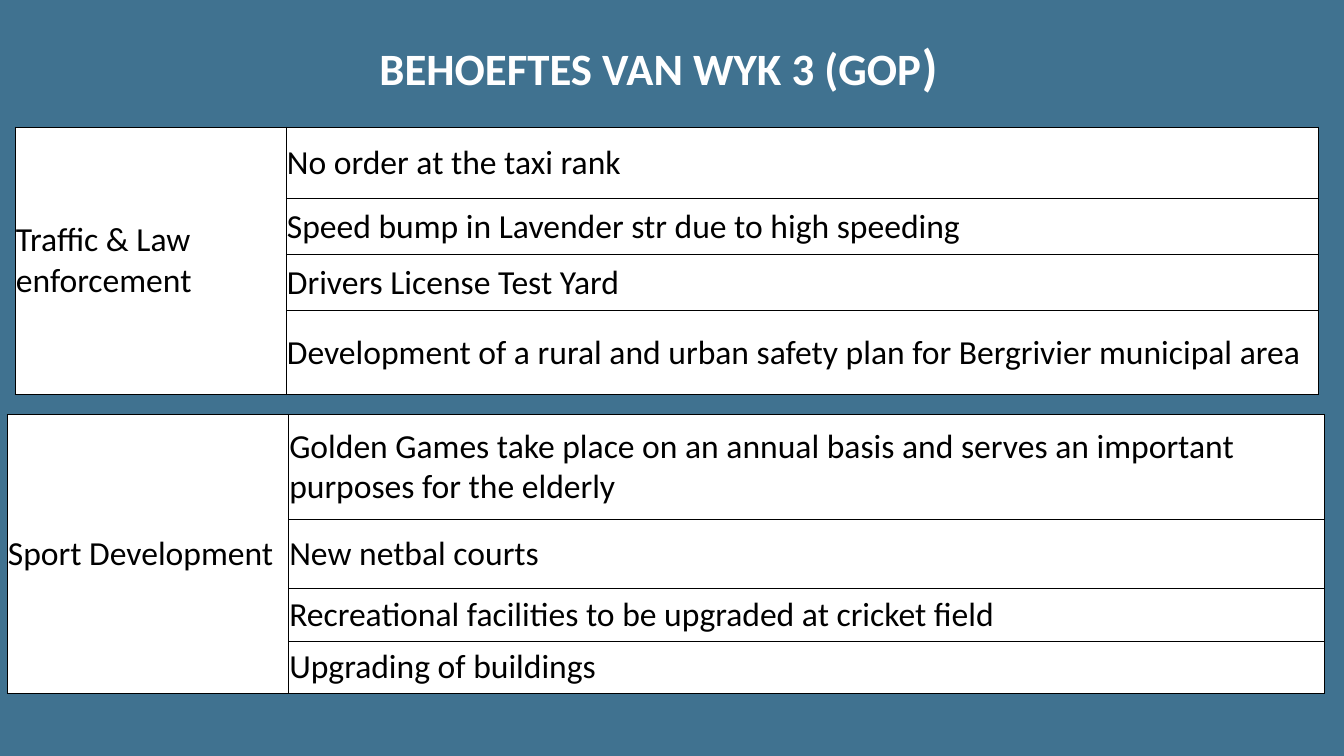
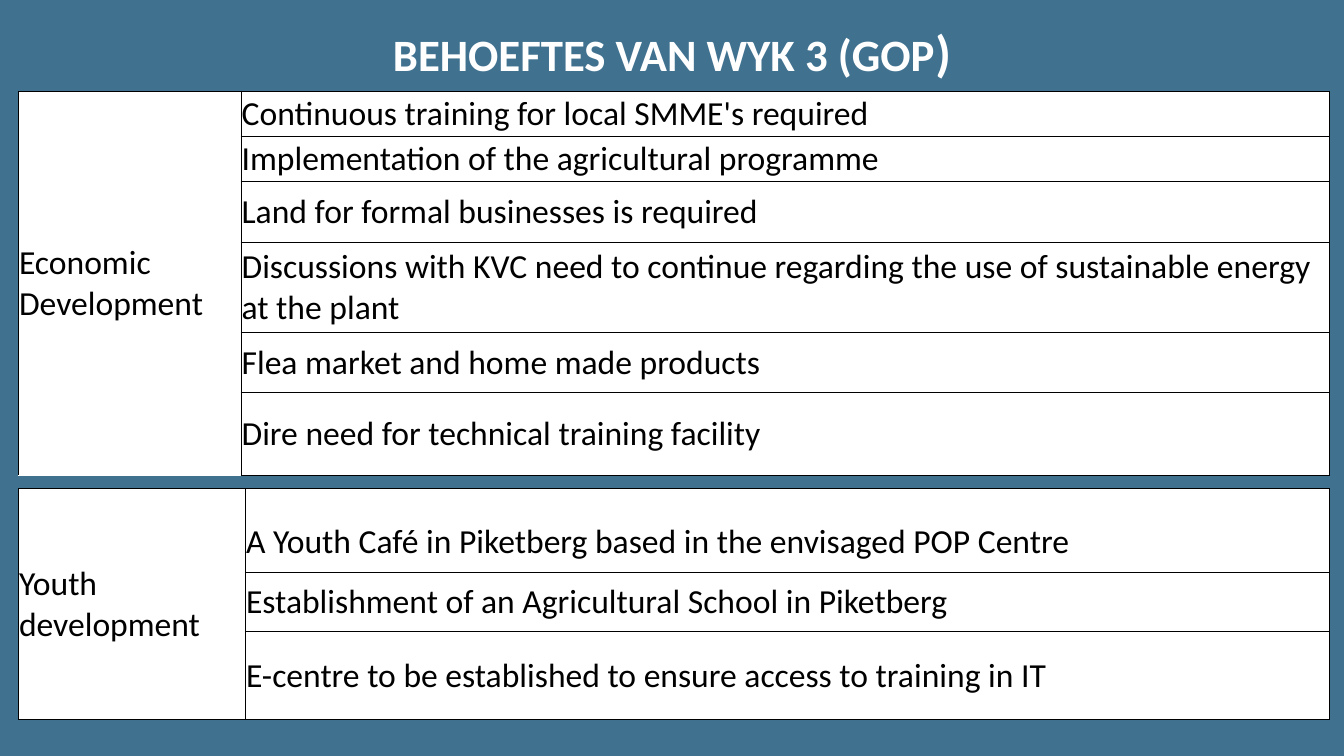
"""Builds two slides listing the needs of ward 3 by department."""
from lxml import etree
from pptx import Presentation
from pptx.dml.color import RGBColor
from pptx.enum.text import MSO_ANCHOR, MSO_AUTO_SIZE, PP_ALIGN
from pptx.oxml.ns import qn
from pptx.util import Cm, Pt

MIDDLE = MSO_ANCHOR.MIDDLE
CENTER = PP_ALIGN.CENTER
GROW = MSO_AUTO_SIZE.SHAPE_TO_FIT_TEXT

BLUE = RGBColor(0x40, 0x72, 0x90)
WHITE = RGBColor(0xFF, 0xFF, 0xFF)
BLACK = RGBColor(0x00, 0x00, 0x00)


class Deck:
    """Holds the shared style and the current slide."""

    font_name = "Calibri"
    body_size = Pt(24)
    title_size = Pt(32)
    bracket_size = Pt(36)
    border_width = Pt(0.5)
    inset = Cm(0.02)

    def __init__(self):
        """Start a widescreen presentation."""
        self.presentation = Presentation()
        self.presentation.slide_width = Cm(33.87)
        self.presentation.slide_height = Cm(19.05)
        self.slide = None

    def add_slide(self):
        """Add a blank slide with the shared background."""
        self.slide = self.presentation.slides.add_slide(self.presentation.slide_layouts[6])
        fill = self.slide.background.fill
        fill.solid()
        fill.fore_color.rgb = BLUE

    def style_font(self, font, color, bold=False):
        """Apply the shared typeface."""
        font.name = self.font_name
        font.color.rgb = color
        font.bold = bold

    def add_title(self, left, top):
        """Add the heading with its larger closing bracket."""
        box = self.slide.shapes.add_textbox(Cm(left), Cm(top), Cm(16.93), Cm(1.8))
        frame = box.text_frame
        frame.word_wrap = True
        frame.auto_size = GROW
        paragraph = frame.paragraphs[0]
        paragraph.alignment = CENTER
        self.style_font(paragraph.font, WHITE, bold=True)
        for text, size in (("BEHOEFTES VAN WYK 3 (GOP", self.title_size),
                           (")", self.bracket_size)):
            run = paragraph.add_run()
            run.text = text
            run.font.size = size

    def add_borders(self, cell, sides):
        """Draw thin lines on the given sides of a cell."""
        properties = cell._tc.get_or_add_tcPr()
        for side in sides:
            line = etree.SubElement(properties, qn(f"a:ln{side}"), w=str(self.border_width))
            solid = etree.SubElement(line, qn("a:solidFill"))
            etree.SubElement(solid, qn("a:srgbClr"), val=str(BLACK))

    def style_cell(self, cell, sides):
        """Give a cell its borders, fill, insets and font."""
        self.add_borders(cell, sides)
        cell.fill.solid()
        cell.fill.fore_color.rgb = WHITE
        cell.vertical_anchor = MIDDLE
        cell.margin_left = cell.margin_right = cell.margin_top = self.inset
        cell.margin_bottom = 0
        font = cell.text_frame.paragraphs[0].font
        font.size = self.body_size
        self.style_font(font, BLACK)

    def add_needs(self, left, top, widths, department, needs, department_sides="LRTB"):
        """Add a table of (need, row height) pairs beside a merged department cell."""
        heights = [height for _, height in needs]
        frame = self.slide.shapes.add_table(len(needs), len(widths), Cm(left), Cm(top),
                                            Cm(sum(widths)), Cm(sum(heights)))
        table = frame.table
        table.first_row = table.horz_banding = False
        for column, width in zip(table.columns, widths):
            column.width = Cm(width)
        for index, (need, height) in enumerate(needs):
            table.rows[index].height = Cm(height)
            table.cell(index, 1).text = need
            self.style_cell(table.cell(index, 0), department_sides)
            self.style_cell(table.cell(index, 1), "LRTB")
        table.cell(0, 0).merge(table.cell(len(needs) - 1, 0))
        table.cell(0, 0).text = department
        self.style_cell_text(table.cell(0, 0))
        return table

    def style_cell_text(self, cell):
        """Set the body font of a cell."""
        font = cell.text_frame.paragraphs[0].font
        font.size = self.body_size
        self.style_font(font, BLACK)


def main():
    """Build and save the presentation."""
    deck = Deck()

    deck.add_slide()
    deck.add_needs(0.38, 3.2, (6.83, 26.01), "Traffic & Law enforcement", [
        ("No order at the taxi rank", 1.79),
        ("Speed bump in Lavender str due to high speeding", 1.42),
        ("Drivers License Test Yard", 1.42),
        ("Development of a rural and urban safety plan for Bergrivier municipal area", 2.1),
    ])
    deck.add_needs(0.18, 10.44, (7.09, 26.11), "Sport Development", [
        ("Golden Games take place on an annual basis and serves an important "
         "purposes for the elderly", 2.64),
        ("New netbal courts", 1.74),
        ("Recreational facilities to be upgraded at cricket field", 1.33),
        ("Upgrading of buildings", 1.31),
    ])
    deck.add_title(8.13, 0.76)

    deck.add_slide()
    deck.add_needs(0.46, 2.3, (5.61, 27.43), "Economic Development", [
        ("Continuous training for local SMME's required", 1.13),
        ("Implementation of the agricultural programme", 1.13),
        ("Land for formal businesses is required", 1.54),
        ("Discussions with KVC need to continue regarding the use of sustainable energy "
         "at the plant", 2.27),
        ("Flea market and home made products", 1.53),
        ("Dire need for technical training facility", 2.08),
    ], department_sides="LRT")
    youth_table = deck.add_needs(0.46, 12.31, (5.72, 27.33), "Youth development", [
        ("A Youth Café in Piketberg based in the envisaged POP Centre", 2.1),
        ("Establishment of an Agricultural School in Piketberg", 1.49),
        ("E-centre to be established to ensure access to training in IT", 2.23),
    ])
    youth_table.cell(0, 1).margin_top = Cm(0.6)
    deck.add_title(8.47, 0.41)

    deck.presentation.save("out.pptx")


if __name__ == "__main__":
    main()
